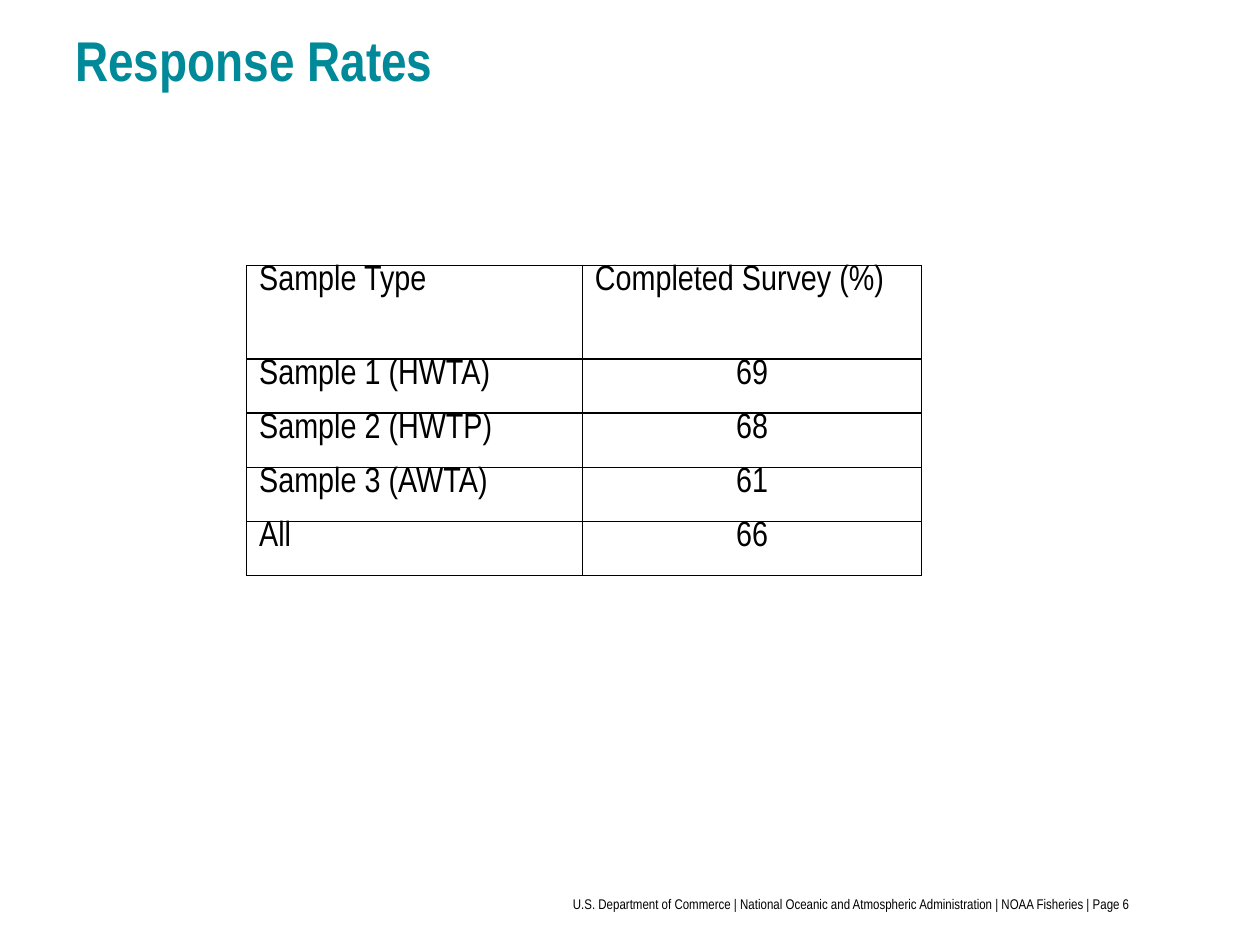
from lxml.etree import SubElement
from pptx import Presentation
from pptx.dml.color import RGBColor
from pptx.enum.text import MSO_ANCHOR as Anchor, PP_ALIGN as Align
from pptx.oxml.ns import qn
from pptx.util import Cm, Pt

BLACK = "000000"
TEAL = "008998"


def format_text(text_frame, size, color, bold=False):
    for paragraph in text_frame.paragraphs:
        for run in paragraph.runs:
            run.font.name = "Arial Narrow"
            run.font.size = Pt(size)
            run.font.bold = bold
            run.font.color.rgb = RGBColor.from_string(color)


def add_borders(cell, color, width):
    """Draw a solid line on all four sides of a table cell."""
    properties = cell._tc.get_or_add_tcPr()
    for index, side in enumerate(("a:lnL", "a:lnR", "a:lnT", "a:lnB")):
        line = properties.makeelement(qn(side), {"w": str(Pt(width))})
        fill = SubElement(line, qn("a:solidFill"))
        SubElement(fill, qn("a:srgbClr"), val=color)
        properties.insert(index, line)


presentation = Presentation()
presentation.slide_width = Cm(25.4)
presentation.slide_height = Cm(19.05)
slide = presentation.slides.add_slide(presentation.slide_layouts[6])

# Title
title = slide.shapes.add_textbox(Cm(1.27), Cm(0.3), Cm(22.86), Cm(1.8))
title.text_frame.word_wrap = True
title.text_frame.vertical_anchor = Anchor.MIDDLE
title.text_frame.text = "Response Rates"
format_text(title.text_frame, 32, TEAL, bold=True)

# Response rate table
rates = [
    ("Sample Type", "Completed Survey (%)"),
    ("Sample 1 (HWTA)", "69"),
    ("Sample 2 (HWTP)", "68"),
    ("Sample 3 (AWTA)", "61"),
    ("All", "66"),
]
column_widths = [Cm(6.77), Cm(6.84)]
row_heights = [Cm(1.89)] + [Cm(1.09)] * 4
table = slide.shapes.add_table(
    len(rates), 2, Cm(4.97), Cm(5.35), sum(column_widths), sum(row_heights)
).table
table.first_row = False
table.horz_banding = False
for column, width in zip(table.columns, column_widths):
    column.width = width
for row, height in zip(table.rows, row_heights):
    row.height = height

for row_index, values in enumerate(rates):
    for column_index, value in enumerate(values):
        cell = table.cell(row_index, column_index)
        cell.margin_top = cell.margin_bottom = 0
        cell.fill.background()
        add_borders(cell, BLACK, 1)
        cell.text_frame.text = value
        format_text(cell.text_frame, 20, BLACK)
        if row_index > 0 and column_index == 1:
            cell.text_frame.paragraphs[0].alignment = Align.CENTER

# Footer
footer = slide.shapes.add_textbox(Cm(11.3), Cm(17.93), Cm(12.83), Cm(1.12))
footer.text_frame.word_wrap = True
footer.text_frame.text = (
    "U.S. Department of Commerce | National Oceanic and Atmospheric "
    "Administration | NOAA Fisheries | Page 6"
)
format_text(footer.text_frame, 8, BLACK)

presentation.save("out.pptx")
